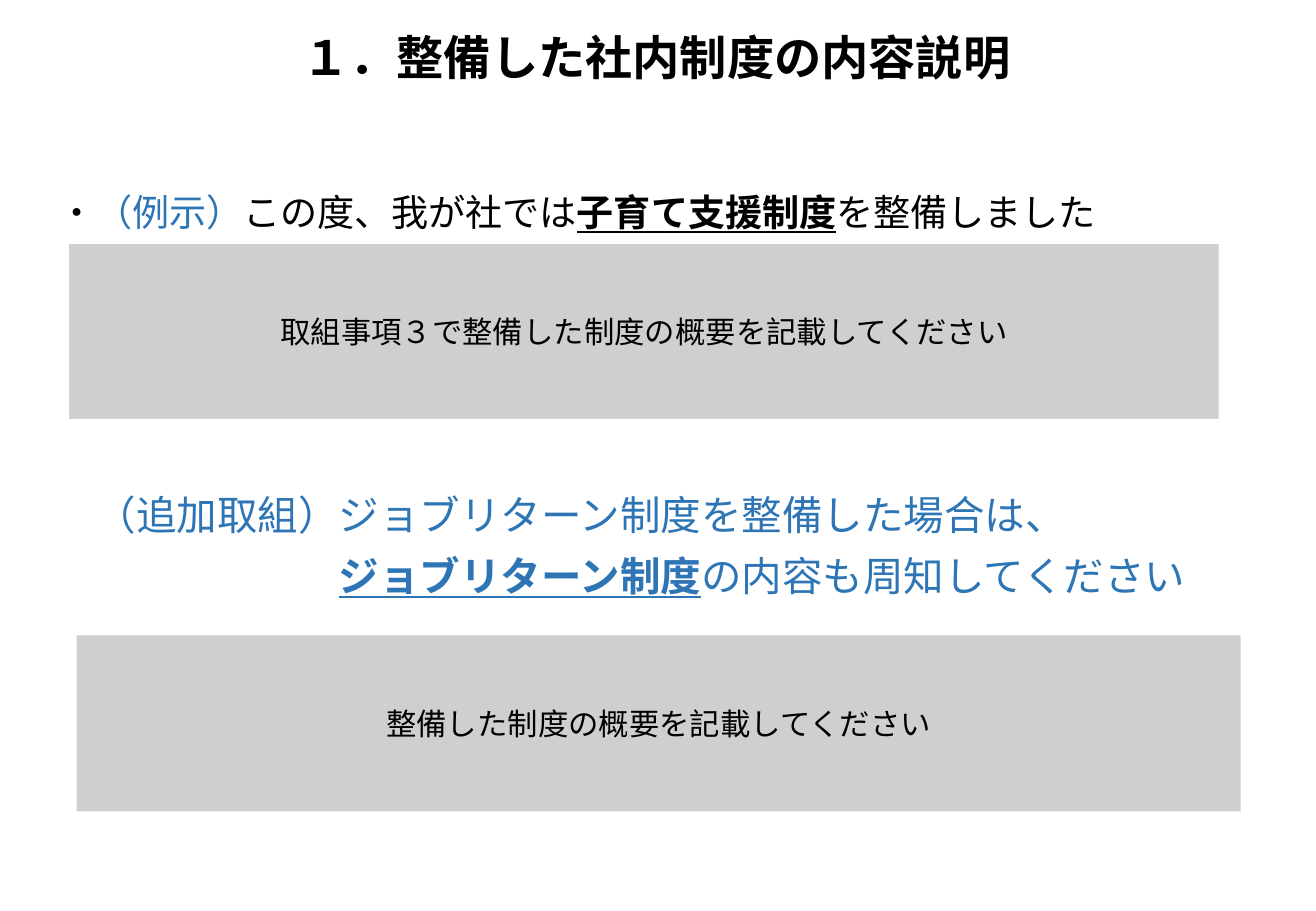
from pptx import Presentation
from pptx.dml.color import RGBColor
from pptx.enum.shapes import MSO_SHAPE as Shape
from pptx.enum.text import MSO_ANCHOR as Anchor, PP_ALIGN as Align
from pptx.util import Inches, Pt

BLACK = "000000"
BLUE = "2E75B6"
GREY = "D0CECE"
KEYWORD = {"bold": True, "underline": True}


def color(value):
    return RGBColor.from_string(value)


def apply(target, formats):
    for key, value in formats.items():
        setattr(target, key, value)


def add_runs(paragraph, runs, font, size):
    for text, hue, emphasis in runs:
        run = paragraph.add_run()
        run.text = text
        apply(run.font, {"name": font, "size": Pt(size), **emphasis})
        run.font.color.rgb = color(hue)


def add_text(slide, place, lines, font, size, space_before=10, anchor=Anchor.TOP):
    box = slide.shapes.add_textbox(*map(Inches, place))
    frame = box.text_frame
    apply(frame, {"word_wrap": True, "vertical_anchor": anchor})
    for index, (indent, runs) in enumerate(lines):
        paragraph = frame.add_paragraph() if index else frame.paragraphs[0]
        apply(paragraph, {"line_spacing": 0.9, "space_before": Pt(space_before)})
        if indent:
            paragraph._p.get_or_add_pPr().set("marL", str(Inches(indent)))
        add_runs(paragraph, runs, font, size)


def add_summary_panel(slide, place, prompt):
    panel = slide.shapes.add_shape(Shape.RECTANGLE, *map(Inches, place))
    panel.shadow.inherit = False
    panel.fill.solid()
    panel.fill.fore_color.rgb = color(GREY)
    panel.line.fill.background()
    frame = panel.text_frame
    apply(frame, {"word_wrap": True, "vertical_anchor": Anchor.MIDDLE})
    paragraph = frame.paragraphs[0]
    paragraph.alignment = Align.CENTER
    add_runs(paragraph, [(prompt, BLACK, {})], "Calibri", 18)


def main():
    deck = Presentation()
    apply(deck, {"slide_width": Inches(10.83), "slide_height": Inches(7.5)})
    slide = deck.slides.add_slide(deck.slide_layouts[6])

    title = [(0, [("１．整備した社内制度の内容説明", BLACK, {"bold": True})])]
    add_text(slide, (2.39, 0.23, 6.09, 0.53), title, "Arial", 28, 0, Anchor.MIDDLE)

    job_return = [
        (0, [("（追加取組）ジョブリターン制度を整備した場合は、", BLUE, {})]),
        (2, [("ジョブリターン制度", BLUE, KEYWORD),
             ("の内容も周知してください", BLUE, {})]),
    ]
    add_text(slide, (0.69, 4.03, 9.29, 0.97), job_return, "Calibri", 24)

    add_summary_panel(slide, (0.63, 5.23, 9.58, 1.45),
                      "整備した制度の概要を記載してください")
    add_summary_panel(slide, (0.57, 2.01, 9.46, 1.44),
                      "取組事項３で整備した制度の概要を記載してください")

    childcare = [(0, [
        ("・", BLACK, {}),
        ("（例示）", BLUE, {}),
        ("この度、我が社では", BLACK, {}),
        ("子育て支援制度", BLACK, KEYWORD),
        ("を整備しました", BLACK, {}),
    ])]
    add_text(slide, (0.38, 1.55, 8.84, 0.44), childcare, "Arial", 22)

    deck.save("out.pptx")


if __name__ == "__main__":
    main()
